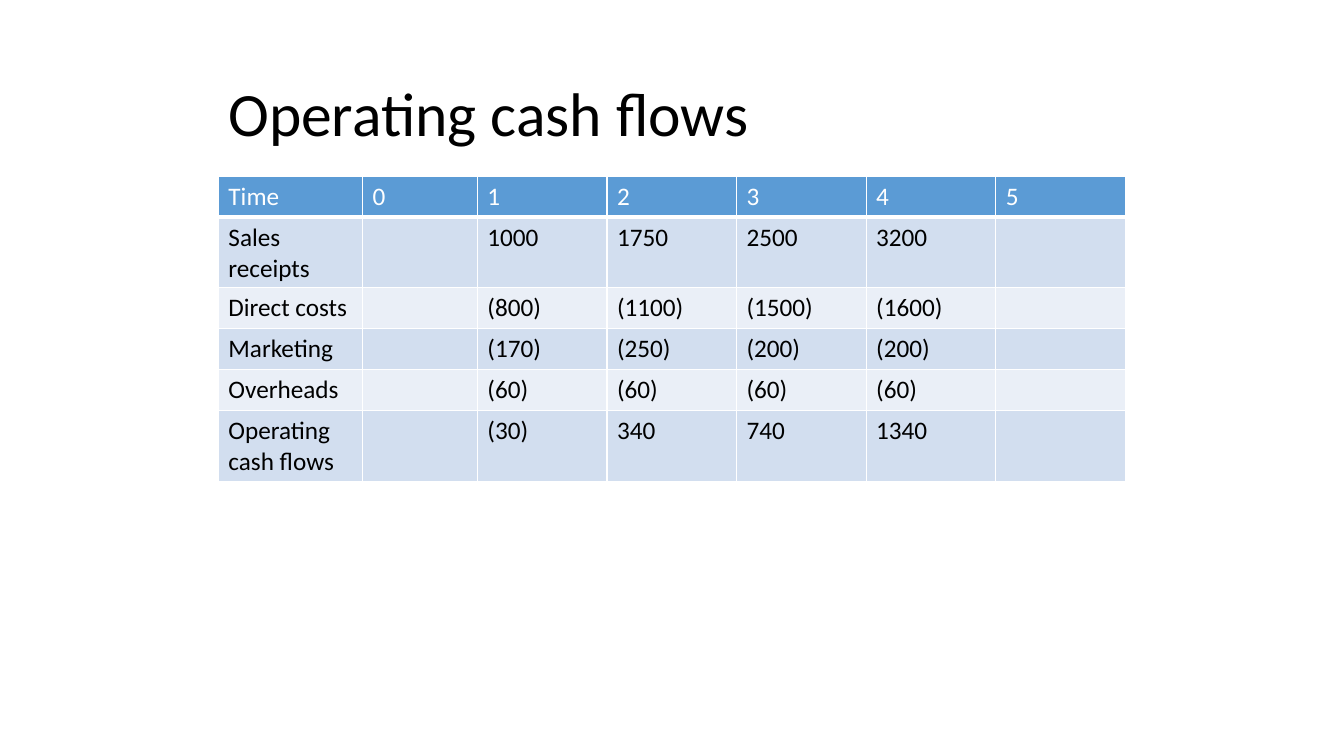
import pptx
import pptx.dml.color
import pptx.enum.text
import pptx.oxml
import pptx.oxml.ns
import pptx.util

Pt = pptx.util.Pt
COLOURS = {"ink": "000000", "white": "FFFFFF", "header": "5B9BD5",
           "odd": "D2DEEF", "even": "EAEFF7"}
TITLE_BOX = (156, 54.7, 648, 56.9)
TABLE_BOX = (156, 126, 648, 217.6)
LABEL_WIDTH, START_WIDTH = 103, 82
LINE_ROW, WRAPPED_ROW = 29.2, 50.4
CASH_FLOWS = [
    ["Time", "0", "1", "2", "3", "4", "5"],
    ["Sales receipts", "", "1000", "1750", "2500", "3200", ""],
    ["Direct costs", "", "(800)", "(1100)", "(1500)", "(1600)", ""],
    ["Marketing", "", "(170)", "(250)", "(200)", "(200)", ""],
    ["Overheads", "", "(60)", "(60)", "(60)", "(60)", ""],
    ["Operating cash flows", "", "(30)", "340", "740", "1340", ""],
]
WRAPPED_LABELS = {"Sales receipts", "Operating cash flows"}


def colour(name):
    return pptx.dml.color.RGBColor.from_string(COLOURS[name])


def write(para, text, size, ink):
    para.text = text
    font_format = {"name": "Calibri", "size": Pt(size), "bold": False}
    for span in [para, *para.runs]:
        for key, value in font_format.items():
            setattr(span.font, key, value)
        span.font.color.rgb = colour(ink)


def add_borders(cell, bottom_width):
    properties = cell._tc.get_or_add_tcPr()
    for side, width in {"L": 1, "R": 1, "T": 1, "B": bottom_width}.items():
        properties.append(pptx.oxml.parse_xml(
            f'<a:ln{side} {pptx.oxml.ns.nsdecls("a")} w="{Pt(width)}">'
            f'<a:solidFill><a:srgbClr val="{COLOURS["white"]}"/></a:solidFill>'
            f'</a:ln{side}>'))


def add_title(page, box):
    frame = page.shapes.add_textbox(*map(Pt, box)).text_frame
    frame_format = {"word_wrap": True,
                    "vertical_anchor": pptx.enum.text.MSO_ANCHOR.MIDDLE}
    for key, value in frame_format.items():
        setattr(frame, key, value)
    para = frame.paragraphs[0]
    para.line_spacing = 0.9
    write(para, "Operating cash flows", 44, "ink")


def add_cash_flow_table(page, box):
    column_count = len(CASH_FLOWS[0])
    table = page.shapes.add_table(
        len(CASH_FLOWS), column_count, *map(Pt, box)).table
    year_width = (box[2] - LABEL_WIDTH - START_WIDTH) / (column_count - 2)
    widths = [LABEL_WIDTH, START_WIDTH] + [year_width] * (column_count - 2)
    for column, width in zip(table.columns, widths):
        column.width = Pt(width)
    for index, values in enumerate(CASH_FLOWS):
        wrapped = values[0] in WRAPPED_LABELS
        table.rows[index].height = Pt(WRAPPED_ROW if wrapped else LINE_ROW)
        is_header = index == 0
        fill = "header" if is_header else "odd" if index % 2 else "even"
        for cell, value in zip(table.rows[index].cells, values):
            add_borders(cell, 3 if is_header else 1)
            cell.fill.solid()
            cell.fill.fore_color.rgb = colour(fill)
            write(cell.text_frame.paragraphs[0], value, 18,
                  "white" if is_header else "ink")


def main():
    deck = pptx.Presentation()
    deck.slide_width, deck.slide_height = Pt(960), Pt(540)
    page = deck.slides.add_slide(deck.slide_layouts[6])
    add_title(page, TITLE_BOX)
    add_cash_flow_table(page, TABLE_BOX)
    deck.save("out.pptx")


if __name__ == "__main__":
    main()
